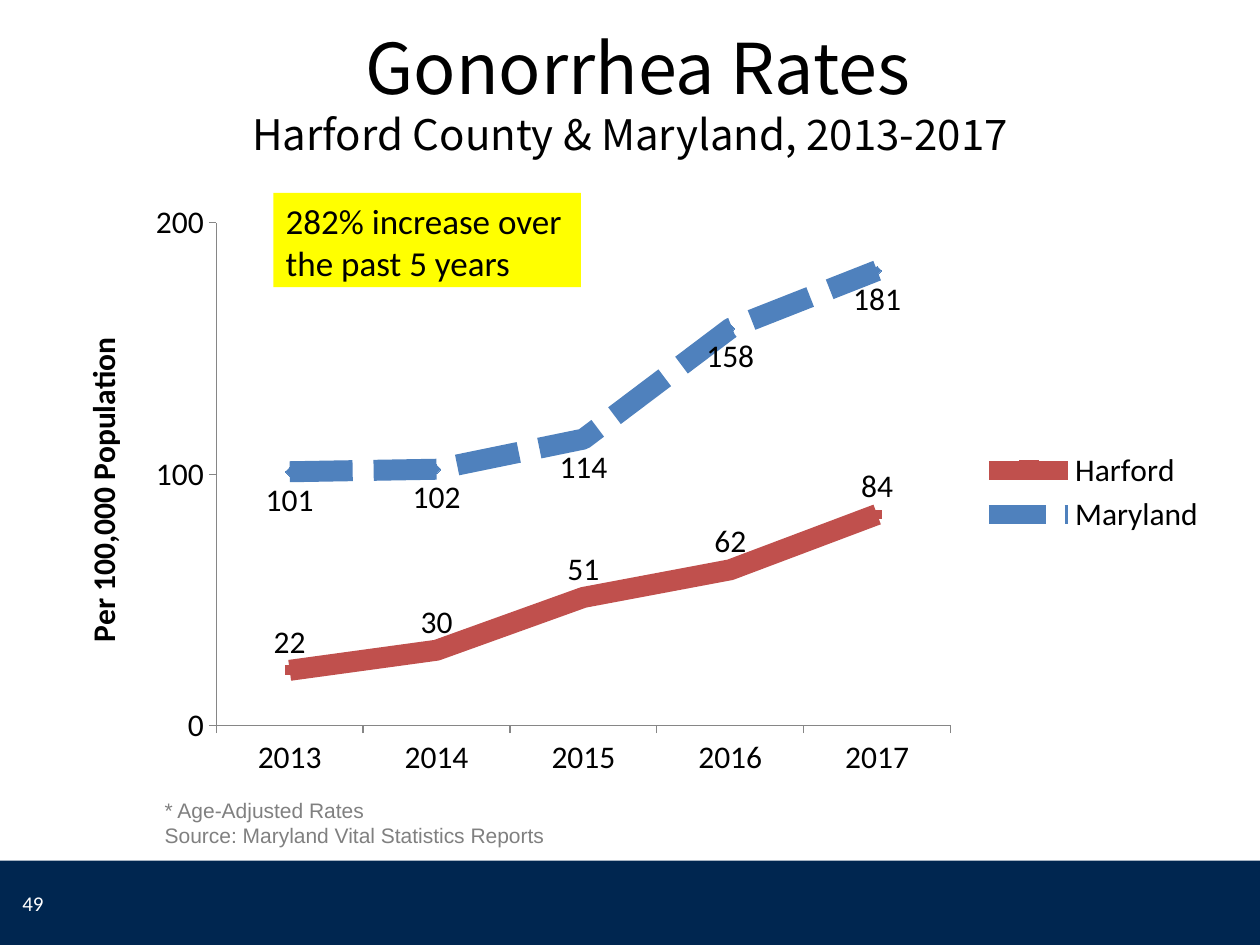
from lxml import etree
from pptx import Presentation
from pptx.chart.data import CategoryChartData
from pptx.dml.color import RGBColor
from pptx.enum.chart import (XL_CHART_TYPE, XL_LABEL_POSITION,
                             XL_LEGEND_POSITION, XL_TICK_MARK)
from pptx.enum.dml import MSO_LINE
from pptx.enum.shapes import MSO_SHAPE
from pptx.enum.text import MSO_ANCHOR, MSO_AUTO_SIZE, PP_ALIGN
from pptx.oxml.ns import qn
from pptx.util import Cm, Pt

LINE, RECT = XL_CHART_TYPE.LINE, MSO_SHAPE.RECTANGLE
ABOVE, BELOW = XL_LABEL_POSITION.ABOVE, XL_LABEL_POSITION.BELOW
RIGHT, OUT = XL_LEGEND_POSITION.RIGHT, XL_TICK_MARK.OUTSIDE
SOLID, DASH = MSO_LINE.SOLID, MSO_LINE.SQUARE_DOT
TOP, MIDDLE = MSO_ANCHOR.TOP, MSO_ANCHOR.MIDDLE
LEFT, CENTER = PP_ALIGN.LEFT, PP_ALIGN.CENTER
NO_FIT = MSO_AUTO_SIZE.NONE

YEARS = ["2013", "2014", "2015", "2016", "2017"]
# Name, values, colour, dash, label place
SERIES = [
    ("Harford", [22, 30, 51, 62, 84], "C0504D", SOLID, ABOVE),
    ("Maryland", [101, 102, 114, 158, 181], "4F81BD", DASH, BELOW),
]
# Plot area as shares of the chart frame
PLOT = {"x": 0.14, "y": 0.05, "w": 0.63, "h": 0.84}


def rgb(code):
    return RGBColor.from_string(code)


def style(font, face, size, color, bold=False):
    font.name, font.size, font.bold = face, Pt(size), bold
    font.color.rgb = rgb(color)


def add_run(para, text, face, size, color):
    run = para.add_run()
    run.text = text
    style(run.font, face, size, color)


def add_title(slide):
    title = slide.shapes.title
    title.left, title.top = Cm(1.27), Cm(0)
    title.width, title.height = Cm(22.86), Cm(2.97)
    frame = title.text_frame
    frame.auto_size, frame.vertical_anchor = NO_FIT, TOP
    frame.margin_top = Cm(0.5)
    para = frame.paragraphs[0]
    para.alignment = CENTER
    add_run(para, " Gonorrhea Rates", "Noto Sans CJK SC", 40, "000000")
    para.add_line_break()
    add_run(para, "Harford County & Maryland, 2013-2017",
            "Noto Sans CJK SC", 24, "000000")


def add_rect(slide, box, color):
    rect = slide.shapes.add_shape(RECT, *map(Cm, box))
    rect.shadow.inherit = False
    rect.fill.solid()
    rect.fill.fore_color.rgb = rgb(color)
    rect.line.fill.background()
    return rect


def write(shape, lines, face, size, color, anchor=TOP):
    frame = shape.text_frame
    frame.word_wrap, frame.vertical_anchor = True, anchor
    for i, text in enumerate(lines):
        para = frame.add_paragraph() if i else frame.paragraphs[0]
        para.alignment = LEFT
        add_run(para, text, face, size, color)


def add_text(slide, box, *args):
    write(slide.shapes.add_textbox(*map(Cm, box)), *args)


def set_plot(chart):
    """Fix the inner plot area to the PLOT shares."""
    area = chart.plots[0]._element.getparent()
    for old in area.findall(qn("c:layout")):
        area.remove(old)
    layout = etree.Element(qn("c:layout"))
    area.insert(0, layout)
    manual = etree.SubElement(layout, qn("c:manualLayout"))
    parts = [("layoutTarget", "inner"), ("xMode", "edge"), ("yMode", "edge")]
    for tag, val in parts + list(PLOT.items()):
        etree.SubElement(manual, qn("c:" + tag)).set("val", str(val))


def set_axis(axis):
    axis.has_major_gridlines = False
    axis.major_tick_mark = OUT
    axis.format.line.color.rgb = rgb("868686")
    axis.format.line.width = Pt(0.75)


def add_chart(slide, box):
    data = CategoryChartData(number_format="0")
    data.categories = YEARS
    for name, vals, *_ in SERIES:
        data.add_series(name, vals)
    chart = slide.shapes.add_chart(LINE, *map(Cm, box), data).chart
    style(chart.font, "Calibri", 18, "000000")
    chart.has_title = False
    chart.has_legend = True
    chart.legend.position = RIGHT
    chart.legend.include_in_layout = False
    chart.plots[0].vary_by_categories = False
    set_plot(chart)

    # Axes
    set_axis(chart.category_axis)
    axis = chart.value_axis
    set_axis(axis)
    axis.minimum_scale, axis.maximum_scale, axis.major_unit = 0, 200, 100
    axis.tick_labels.number_format = "0"
    axis.tick_labels.number_format_is_linked = False
    para = axis.axis_title.text_frame.paragraphs[0]
    run = para.add_run()
    run.text = "Per 100,000 Population"
    style(run.font, "Calibri", 18, "000000", True)

    # Lines and labels
    for series, (_, _, color, dash, place) in zip(chart.series, SERIES):
        series.smooth = False
        series.marker.style = None
        line = series.format.line
        line.color.rgb = rgb(color)
        line.width, line.dash_style = Pt(12), dash
        labels = series.data_labels
        labels.show_value, labels.position = True, place
        labels.number_format = "0"
        labels.number_format_is_linked = False
        style(labels.font, "Calibri", 18, "000000")


def main():
    deck = Presentation()
    deck.slide_width, deck.slide_height = Cm(25.4), Cm(19.05)
    slide = deck.slides.add_slide(deck.slide_layouts[5])

    # Footer band and page number
    add_rect(slide, (0, 17.35, 25.4, 1.7), "002650")
    add_title(slide)
    add_text(slide, (0.2, 17.7, 5.92, 1.02), ["49"],
             "Calibri", 12, "FFFFFF", MIDDLE)

    # Chart with source note and callout
    add_chart(slide, (1.07, 3.89, 23.5, 12.07))
    add_text(slide, (3.07, 15.95, 9.73, 1.27),
             ["* Age-Adjusted Rates",
              "Source: Maryland Vital Statistics Reports"],
             "Arial", 12, "808080")
    note = add_rect(slide, (5.51, 3.89, 6.2, 1.9), "FFFF00")
    write(note, ["282% increase over the past 5 years"],
          "Calibri", 20, "000000")

    deck.save("out.pptx")


if __name__ == "__main__":
    main()
